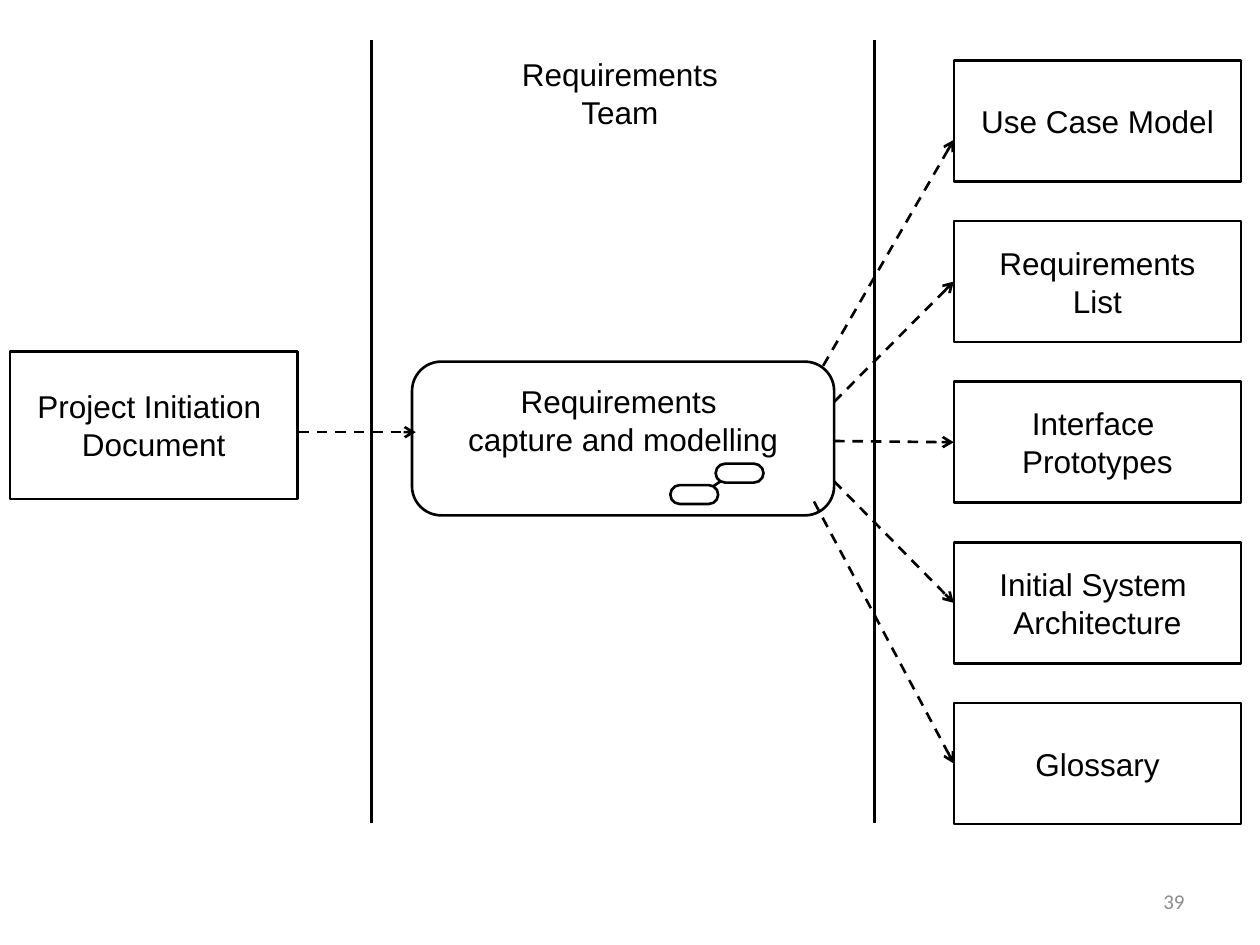
from dataclasses import dataclass

from lxml import etree
from pptx import Presentation
from pptx.dml.color import RGBColor
from pptx.enum.dml import MSO_LINE
from pptx.enum.shapes import MSO_CONNECTOR, MSO_SHAPE
from pptx.enum.text import MSO_ANCHOR, PP_ALIGN
from pptx.oxml.ns import qn
from pptx.util import Inches, Pt

RECT, ROUND = MSO_SHAPE.RECTANGLE, MSO_SHAPE.ROUNDED_RECTANGLE
STRAIGHT, DASH = MSO_CONNECTOR.STRAIGHT, MSO_LINE.DASH
TOP, MIDDLE = MSO_ANCHOR.TOP, MSO_ANCHOR.MIDDLE
CENTER, RIGHT = PP_ALIGN.CENTER, PP_ALIGN.RIGHT
LEFT_SIDE = 1

# The slide is a grid of 100 columns by 75 rows of square cells.
COLS, ROWS = 100, 75
CELL = Inches(10) // COLS


@dataclass(frozen=True)
class Theme:
    ink: RGBColor = RGBColor(0, 0, 0)
    paper: RGBColor = RGBColor(255, 255, 255)
    grey: RGBColor = RGBColor(0x8C, 0x8C, 0x8C)
    body: str = "Arial"
    foot: str = "Calibri"
    big: Pt = Pt(18)
    small: Pt = Pt(12)
    stroke: Pt = Pt(1.5)


THEME = Theme()
BODY = {"name": THEME.body, "size": THEME.big}
FOOT = {"name": THEME.foot, "size": THEME.small}

OUTPUTS = [
    ["Use Case Model"],
    ["Requirements", "List"],
    ["Interface ", "Prototypes"],
    ["Initial System ", "Architecture"],
    ["Glossary"],
]
OUT_LEFT, OUT_TOP, OUT_STEP = 75.7, 4.8, 12.75
BOX_WIDE, OUT_HIGH = 22.8, 9.6
STARTS = [(64.6, 30.3), (66.2, 31.9), (66.2, 35), (66.2, 38.2), (64.6, 39.8)]


def cells(*counts):
    return [round(count * CELL) for count in counts]


def assign(item, values):
    for name, value in values.items():
        setattr(item, name, value)


def write(shape, lines, font=BODY, color=THEME.ink, align=CENTER, **frame):
    """Fill the shape with one paragraph per line of text."""
    text = shape.text_frame
    assign(text, {"word_wrap": False, "vertical_anchor": MIDDLE, **frame})
    text.text = "\n".join(lines)
    for para in text.paragraphs:
        para.alignment = align
        for run in para.runs:
            assign(run.font, font)
            run.font.color.rgb = color


def label(shapes, area, lines, **style):
    write(shapes.add_textbox(*cells(*area)), lines, **style)


def box(shapes, area, kind=RECT, bend=None):
    shape = shapes.add_shape(kind, *cells(*area))
    shape.shadow.inherit = False
    shape.fill.solid()
    shape.fill.fore_color.rgb = THEME.paper
    shape.line.color.rgb = THEME.ink
    shape.line.width = THEME.stroke
    if bend is not None:
        shape.adjustments[0] = bend
    return shape


def rule(shapes, start, end):
    line = shapes.add_connector(STRAIGHT, *cells(*start, *end))
    line.line.color.rgb = THEME.ink
    line.line.width = THEME.stroke
    etree.SubElement(line._element.spPr, qn("a:effectLst"))
    return line


def arrow(shapes, start, end, target=None):
    """Draw a dashed arrow, joined to the left side of any target."""
    line = rule(shapes, start, end)
    line.line.dash_style = DASH
    etree.SubElement(line.line._get_or_add_ln(), qn("a:tailEnd"), type="arrow")
    if target is not None:
        line.end_connect(target, LEFT_SIDE)


def icon(shapes):
    """Draw two linked pills, the mark of a task with parts."""
    parts = shapes.add_group_shape().shapes
    for left, top in [(56.8, 36.8), (53.2, 38.5)]:
        box(parts, (left, top, 3.8, 1.5), ROUND, 0.5)
    rule(parts, (56.6, 38.6), (57.2, 38.2))


def task(shapes):
    shape = box(shapes, (32.7, 28.7, 33.5, 12.2), ROUND, 0.19)
    write(shape, ["Requirements ", "capture and modelling"],
          margin_bottom=cells(3.5)[0])
    icon(shapes)


def main():
    deck = Presentation()
    deck.slide_width, deck.slide_height = cells(COLS, ROWS)
    shapes = deck.slides.add_slide(deck.slide_layouts[6]).shapes

    label(shapes, (71.7, 69.5, 23.3, 4), ["39"],
          font=FOOT, color=THEME.grey, align=RIGHT, word_wrap=True)
    for col in (29.5, 69.4):
        rule(shapes, (col, 3.2), (col, 65.3))
    label(shapes, (40.4, 3.9, 17.6, 7), ["Requirements", "Team"],
          vertical_anchor=TOP)

    source = box(shapes, (0.8, 27.9, BOX_WIDE, 11.7))
    write(source, ["Project Initiation ", "Document"])

    goals = []
    for row, lines in enumerate(OUTPUTS):
        top = OUT_TOP + row * OUT_STEP
        goal = box(shapes, (OUT_LEFT, top, BOX_WIDE, OUT_HIGH))
        write(goal, lines)
        goals.append((goal, (OUT_LEFT, top + OUT_HIGH / 2)))

    # The first arrow meets its box below the middle of the side.
    arrow(shapes, STARTS[0], (OUT_LEFT, 11.1))
    for start, (goal, end) in zip(STARTS[1:-1], goals[1:-1]):
        arrow(shapes, start, end, goal)
    task(shapes)
    # These two arrows overlap the task, so they lie in front of it.
    arrow(shapes, (23.7, 34.3), (33, 34.3))
    goal, end = goals[-1]
    arrow(shapes, STARTS[-1], end, goal)

    deck.save("out.pptx")


if __name__ == "__main__":
    main()
